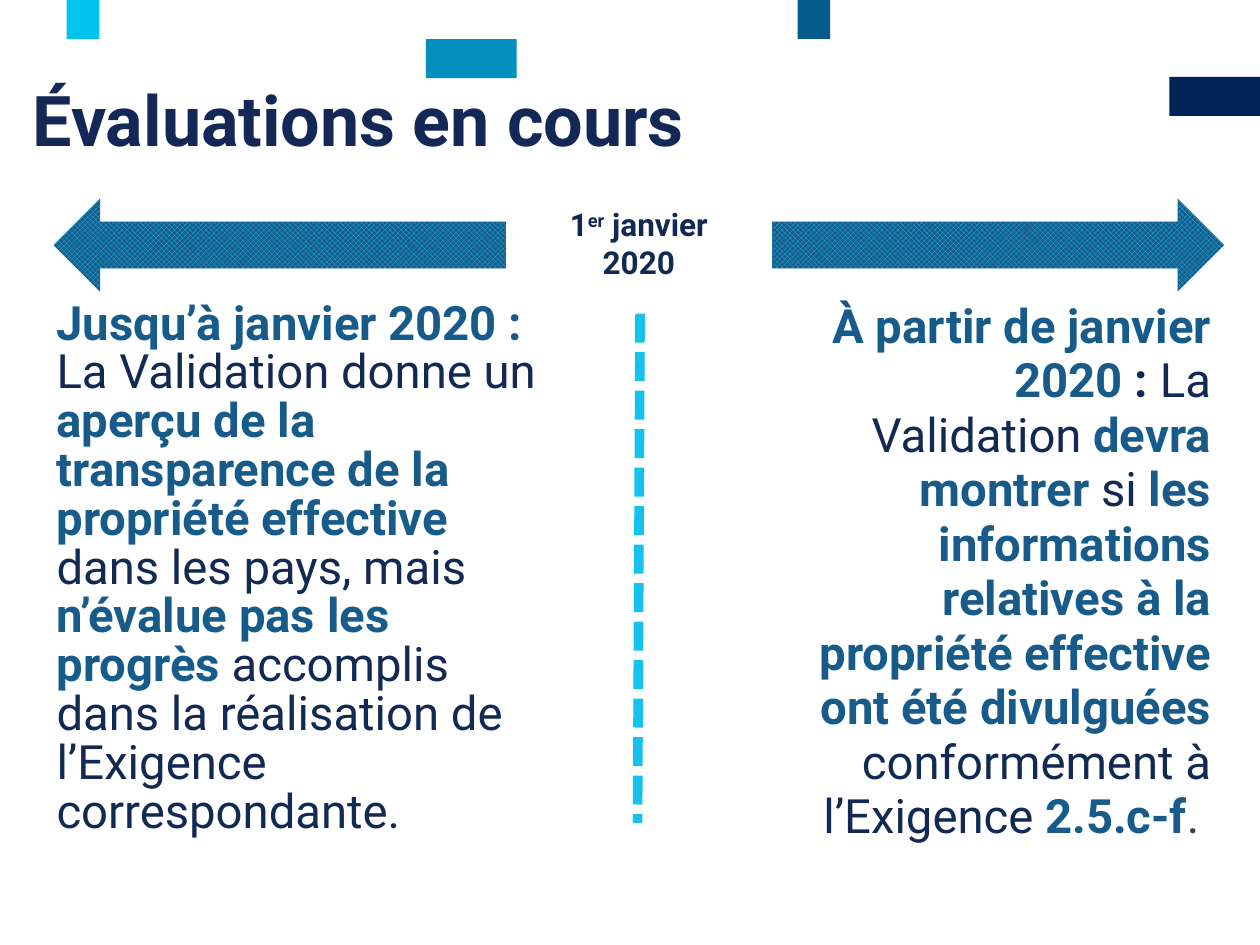
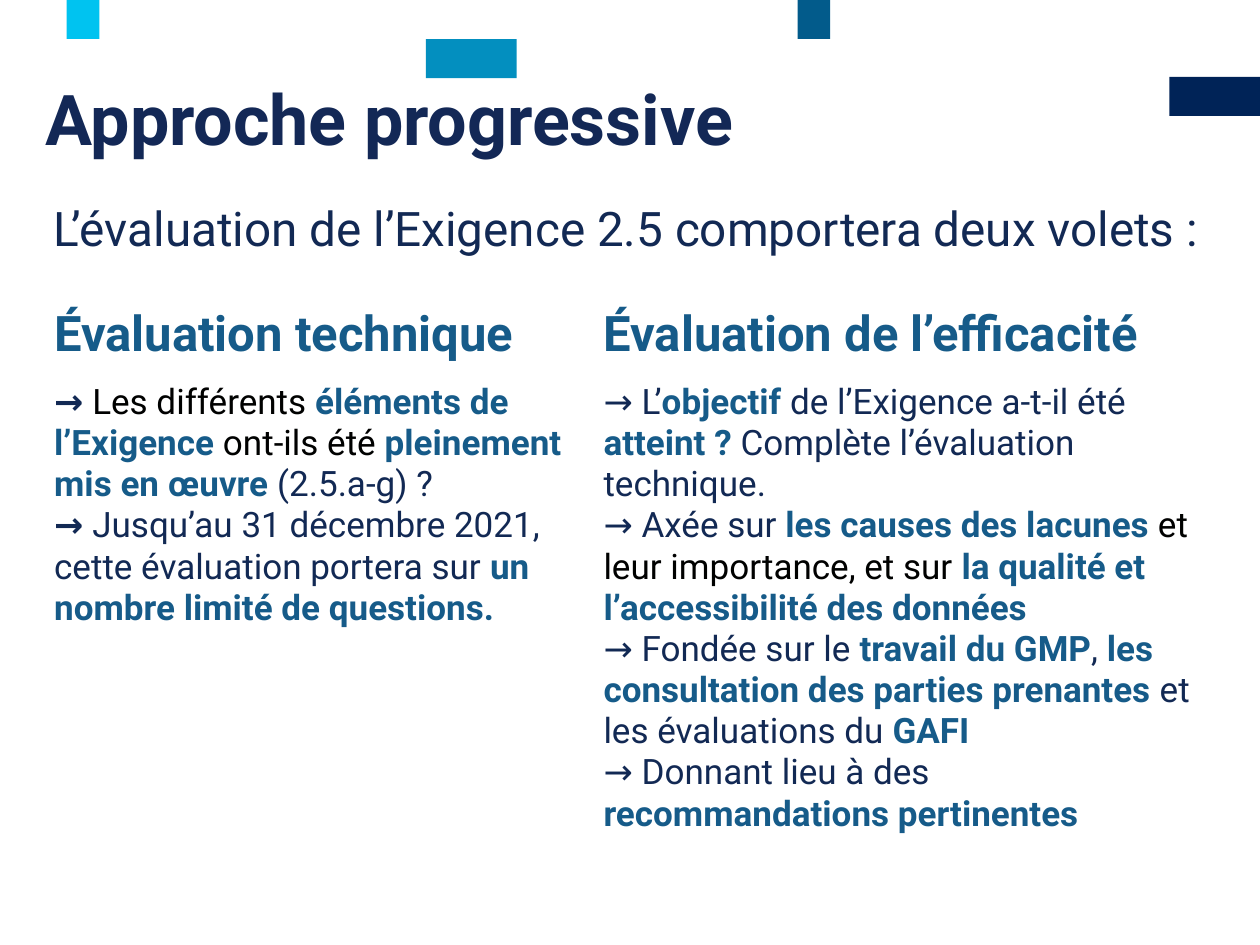
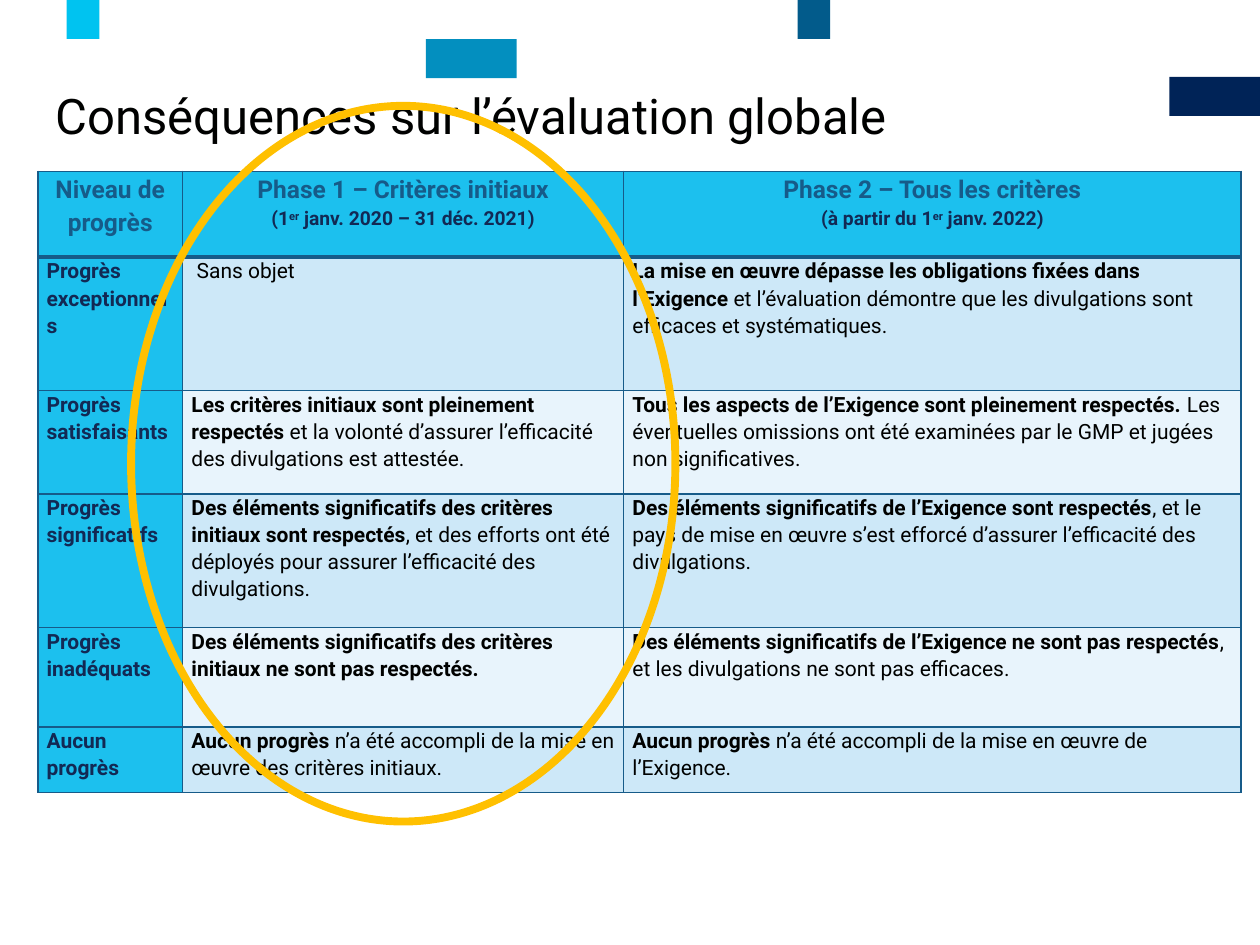
from dataclasses import dataclass

from lxml.etree import SubElement
from pptx import Presentation
from pptx.dml.color import RGBColor
from pptx.enum.dml import MSO_LINE, MSO_PATTERN
from pptx.enum.shapes import MSO_CONNECTOR, MSO_SHAPE
from pptx.enum.text import MSO_ANCHOR, MSO_AUTO_SIZE, PP_ALIGN
from pptx.oxml.ns import qn
from pptx.slide import Slide, SlideLayout
from pptx.table import Table, _Cell
from pptx.text.text import TextFrame
from pptx.util import Inches, Pt


@dataclass(frozen=True)
class Theme:
    font: str = "Roboto"
    title_ink: str = "132856"
    navy: str = "122954"
    accent: str = "165B89"
    black: str = "000100"
    grey: str = "404040"
    cyan: str = "1CC0EE"
    divider: str = "15C2EE"
    ring: str = "FFC000"
    stripes: tuple[str, str] = ("CDE8F8", "E8F4FC")
    title_size: float = 40
    heading_size: float = 28
    body_size: float = 27
    lead_size: float = 27.2
    list_size: float = 20
    date_size: float = 18
    header_size: float = 14
    cell_size: float = 12
    period_size: float = 11


THEME = Theme()


@dataclass(frozen=True)
class Area:
    left: float
    top: float
    width: float
    height: float

    def lengths(self) -> tuple[Inches, Inches, Inches, Inches]:
        return Inches(self.left), Inches(self.top), Inches(self.width), Inches(self.height)


@dataclass(frozen=True)
class Band:
    area: Area
    color: str


@dataclass(frozen=True)
class Span:
    text: str
    color: str = THEME.navy
    bold: bool = False
    size: float | None = None
    raised: bool = False


@dataclass(frozen=True)
class Style:
    size: float
    align: PP_ALIGN = PP_ALIGN.LEFT
    line_spacing: float = 1.0
    space_after: float = 0
    indent: float = 0


Paragraphs = list[list[Span]]

BANDS = [
    Band(Area(9.28, 0.61, 0.72, 0.31), "002357"),
    Band(Area(6.33, 0, 0.26, 0.31), "025B8B"),
    Band(Area(3.38, 0.31, 0.72, 0.31), "038FBF"),
    Band(Area(0.53, 0, 0.26, 0.31), "00C3F0"),
]


def strong(text: str, size: float | None = None) -> Span:
    return Span(text, THEME.accent, True, size)


def dark(text: str, bold: bool = False) -> Span:
    return Span(text, THEME.black, bold)


def rgb(color: str) -> RGBColor:
    return RGBColor.from_string(color)


def write(frame: TextFrame, paragraphs: Paragraphs, style: Style) -> None:
    frame.word_wrap = True
    for index, spans in enumerate(paragraphs):
        para = frame.add_paragraph() if index else frame.paragraphs[0]
        para.alignment = style.align
        para.line_spacing = style.line_spacing
        para.space_before = Pt(0)
        para.space_after = Pt(style.space_after)
        if style.indent:
            properties = para._p.get_or_add_pPr()
            properties.set("marL", str(Inches(style.indent)))
            properties.set("indent", "0")
        for item in spans:
            span = para.add_run()
            span.text = item.text
            span.font.name = THEME.font
            span.font.size = Pt(item.size or style.size)
            span.font.bold = item.bold
            span.font.color.rgb = rgb(item.color)
            if item.raised:
                span._r.get_or_add_rPr().set("baseline", "30000")


def add_text(page: Slide, area: Area, paragraphs: Paragraphs, style: Style) -> None:
    box = page.shapes.add_textbox(*area.lengths())
    write(box.text_frame, paragraphs, style)


def add_title(page: Slide, area: Area, title: Span) -> None:
    box = page.shapes.title
    box.left, box.top, box.width, box.height = area.lengths()
    frame = box.text_frame
    frame.auto_size = MSO_AUTO_SIZE.NONE
    frame.vertical_anchor = MSO_ANCHOR.MIDDLE
    write(frame, [[title]], Style(THEME.title_size, line_spacing=0.89))


def add_bands(page: Slide, layout: SlideLayout) -> None:
    for band in BANDS:
        box = page.shapes.add_shape(MSO_SHAPE.RECTANGLE, *band.area.lengths())
        box.shadow.inherit = False
        box.fill.solid()
        box.fill.fore_color.rgb = rgb(band.color)
        box.line.fill.background()
        layout.element.cSld.spTree.append(box.element)


def add_arrow(page: Slide, left: float, rotation: float) -> None:
    arrow = page.shapes.add_shape(MSO_SHAPE.DOWN_ARROW, *Area(left, 0.15, 0.74, 3.59).lengths())
    arrow.rotation = rotation
    arrow.shadow.inherit = False
    arrow.fill.patterned()
    arrow.fill.pattern = MSO_PATTERN.TRELLIS
    arrow.fill.fore_color.rgb = rgb(THEME.cyan)
    arrow.fill.back_color.rgb = rgb(THEME.accent)
    arrow.line.fill.background()


def add_divider(page: Slide) -> None:
    divider = page.shapes.add_connector(
        MSO_CONNECTOR.STRAIGHT, Inches(5.08), Inches(2.49), Inches(5.06), Inches(6.53)
    )
    divider.line.color.rgb = rgb(THEME.divider)
    divider.line.width = Pt(5.5)
    divider.line.dash_style = MSO_LINE.SQUARE_DOT
    SubElement(divider.element.spPr, qn("a:effectLst"))


def add_table(page: Slide, left: float, top: float, columns: list[float], rows: list[float]) -> Table:
    area = Area(left, top, sum(columns), sum(rows))
    table = page.shapes.add_table(len(rows), len(columns), *area.lengths()).table
    table.first_row = False
    table.horz_banding = False
    for column, width in zip(table.columns, columns):
        column.width = Inches(width)
    for row, height in zip(table.rows, rows):
        row.height = Inches(height)
    return table


def add_borders(cell: _Cell, top: float, bottom: float) -> None:
    properties = cell._tc.get_or_add_tcPr()
    for side, width in {"L": 1, "R": 1, "T": top, "B": bottom}.items():
        line = SubElement(properties, qn(f"a:ln{side}"), w=str(Pt(width)))
        fill = SubElement(line, qn("a:solidFill"))
        SubElement(fill, qn("a:srgbClr"), val=THEME.accent)


def build_assessments(page: Slide) -> None:
    add_title(page, Area(0.16, 0.62, 8.95, 0.73),
              Span("Évaluations en cours", THEME.title_ink, True))
    after = [
        strong("À partir de janvier 2020 "),
        Span(": ", bold=True),
        Span("La Validation "),
        strong("devra montrer "),
        Span("si "),
        strong("les informations relatives à la propriété effective ont été divulguées"),
        Span(" conformément à l’Exigence "),
        strong("2.5.c-f"),
        Span(". ", THEME.grey),
    ]
    before = [
        strong("Jusqu’à janvier 2020 : "),
        Span("La Validation donne un "),
        strong("aperçu de la transparence de la propriété effective"),
        Span(" dans les pays, mais "),
        strong("n’évalue pas les progrès"),
        Span(" accomplis dans la réalisation de l’Exigence correspondante."),
    ]
    add_text(page, Area(5.85, 2.33, 3.86, 4.44), [after],
             Style(THEME.body_size, PP_ALIGN.RIGHT, 0.96, 12, 0.35))
    add_text(page, Area(0, 2.34, 4.42, 4.06), [before],
             Style(THEME.body_size, PP_ALIGN.LEFT, 0.86, 12, 0.35))
    for left, rotation in ((1.85, 90), (7.55, 270)):
        add_arrow(page, left, rotation)
    date = [
        [Span("1", bold=True), Span("er", bold=True, raised=True), Span(" janvier", bold=True)],
        [Span("2020", bold=True)],
    ]
    add_text(page, Area(2.75, 1.58, 4.64, 0.71), date, Style(THEME.date_size, PP_ALIGN.CENTER))
    add_divider(page)


def build_approach(page: Slide) -> None:
    add_title(page, Area(0.26, 0.56, 8.95, 0.83),
              Span("Approche progressive", THEME.title_ink, True))
    lead = [Span("L’évaluation de l’Exigence 2.5 comportera deux volets :")]
    add_text(page, Area(0.33, 1.6, 9.5, 0.66), [lead],
             Style(THEME.lead_size, PP_ALIGN.JUSTIFY, 0.84, 12))
    technical = [
        [
            Span("→ ", bold=True),
            dark("Les différents "),
            strong("éléments de l’Exigence"),
            dark(" ont-ils été "),
            strong("pleinement mis en œuvre "),
            Span("(2.5.a-g) ?"),
        ],
        [
            Span("→", bold=True),
            Span(" Jusqu’au 31 décembre 2021, cette évaluation portera sur "),
            strong("un nombre limité de questions."),
        ],
    ]
    effectiveness = [
        [
            Span("→ L’"),
            strong("objectif "),
            Span("de l’Exigence a-t-il été "),
            strong("atteint ?"),
            Span(" Complète l’évaluation technique."),
        ],
        [
            Span("→ Axée sur "),
            strong("les causes des lacunes "),
            dark("et leur importance, et sur "),
            strong("la qualité et l’accessibilité des données"),
        ],
        [
            Span("→ Fondée sur le "),
            strong("travail du GMP"),
            Span(", "),
            strong("les consultation des parties prenantes "),
            Span("et les évaluations du "),
            strong("GAFI"),
        ],
        [Span("→ Donnant lieu à des "), strong("recommandations pertinentes")],
    ]
    headings = [[[strong("Évaluation technique ")]], [[strong("Évaluation de l’efficacité")]]]
    heading_style = Style(THEME.heading_size, PP_ALIGN.JUSTIFY, space_after=12)
    table = add_table(page, 0.33, 2.38, [4.36, 4.98], [0.6, 3.96])
    for row, (contents, style) in enumerate(
        ((headings, heading_style), ([technical, effectiveness], Style(THEME.list_size)))
    ):
        for column, paragraphs in enumerate(contents):
            cell = table.cell(row, column)
            cell.fill.background()
            write(cell.text_frame, paragraphs, style)


def phase_heading(name: str, start: str, end: str) -> Paragraphs:
    size = THEME.period_size
    period = [
        Span(start, bold=True, size=size),
        Span("er", bold=True, size=size, raised=True),
        Span(end, bold=True, size=size),
    ]
    return [[strong(name)], period]


def level_row(level: str, first: list[Span], second: list[Span]) -> list[Paragraphs]:
    return [[[Span(level, bold=True)]], [first], [second]]


def build_consequences(page: Slide) -> None:
    add_title(page, Area(0.34, 0.58, 8.45, 0.73),
              Span("Conséquences sur l’évaluation globale", THEME.black, size=THEME.heading_size))
    rows = [
        [
            [[strong("Niveau de progrès")]],
            phase_heading("Phase 1 – Critères initiaux", "(1", " janv. 2020 – 31 déc. 2021)"),
            phase_heading("Phase 2 – Tous les critères", "(à partir du 1", " janv. 2022)"),
        ],
        level_row(
            "Progrès exceptionnels",
            [dark(" Sans objet")],
            [dark("La mise en œuvre dépasse les obligations fixées dans l’Exigence", True),
             dark(" et l’évaluation démontre que les divulgations sont efficaces et systématiques.")],
        ),
        level_row(
            "Progrès satisfaisants",
            [dark("Les critères initiaux sont pleinement respectés", True),
             dark(" et la volonté d’assurer l’efficacité des divulgations est attestée.")],
            [dark("Tous les aspects de l’Exigence sont pleinement respectés.", True),
             dark(" Les éventuelles omissions ont été examinées par le GMP et jugées non significatives.")],
        ),
        level_row(
            "Progrès significatifs",
            [dark("Des éléments significatifs des critères initiaux sont respectés", True),
             dark(", et des efforts ont été déployés pour assurer l’efficacité des divulgations.")],
            [dark("Des éléments significatifs de l’Exigence sont respectés", True),
             dark(", et le pays de mise en œuvre s’est efforcé d’assurer l’efficacité des divulgations.")],
        ),
        level_row(
            "Progrès inadéquats",
            [dark("Des éléments significatifs des critères initiaux ne sont pas respectés.", True)],
            [dark("Des éléments significatifs de l’Exigence ne sont pas respectés", True),
             dark(", et les divulgations ne sont pas efficaces.")],
        ),
        level_row(
            "Aucun progrès",
            [dark("Aucun progrès", True),
             dark(" n’a été accompli de la mise en œuvre des critères initiaux.")],
            [dark("Aucun progrès", True),
             dark(" n’a été accompli de la mise en œuvre de l’Exigence.")],
        ),
    ]
    header_style = Style(THEME.header_size, PP_ALIGN.CENTER, 1.15)
    level_style = Style(THEME.cell_size, line_spacing=1.1)
    table = add_table(page, 0.3, 1.36, [1.15, 3.5, 4.9], [0.68, 1.06, 0.82, 1.06, 0.79, 0.52])
    for row, contents in enumerate(rows):
        for column, paragraphs in enumerate(contents):
            cell = table.cell(row, column)
            cell.margin_left = cell.margin_right = Inches(0.07)
            cell.margin_top = cell.margin_bottom = Inches(0)
            add_borders(cell, top=3 if row == 1 else 1, bottom=3 if row == 0 else 1)
            is_heading = row == 0 or column == 0
            cell.fill.solid()
            cell.fill.fore_color.rgb = rgb(THEME.cyan if is_heading else THEME.stripes[(row - 1) % 2])
            write(cell.text_frame, paragraphs, level_style if row else header_style)
    ring = page.shapes.add_shape(MSO_SHAPE.OVAL, *Area(1.04, 0.84, 4.32, 5.68).lengths())
    ring.shadow.inherit = False
    ring.fill.background()
    ring.line.color.rgb = rgb(THEME.ring)
    ring.line.width = Pt(4.5)


def main() -> None:
    deck = Presentation()
    deck.slide_width, deck.slide_height = Inches(10), Inches(7.5)
    layout = deck.slide_layouts.get_by_name("Title Only")
    for index, build in enumerate((build_assessments, build_approach, build_consequences)):
        page = deck.slides.add_slide(layout)
        if index == 0:
            add_bands(page, layout)
        build(page)
    deck.save("out.pptx")


if __name__ == "__main__":
    main()
